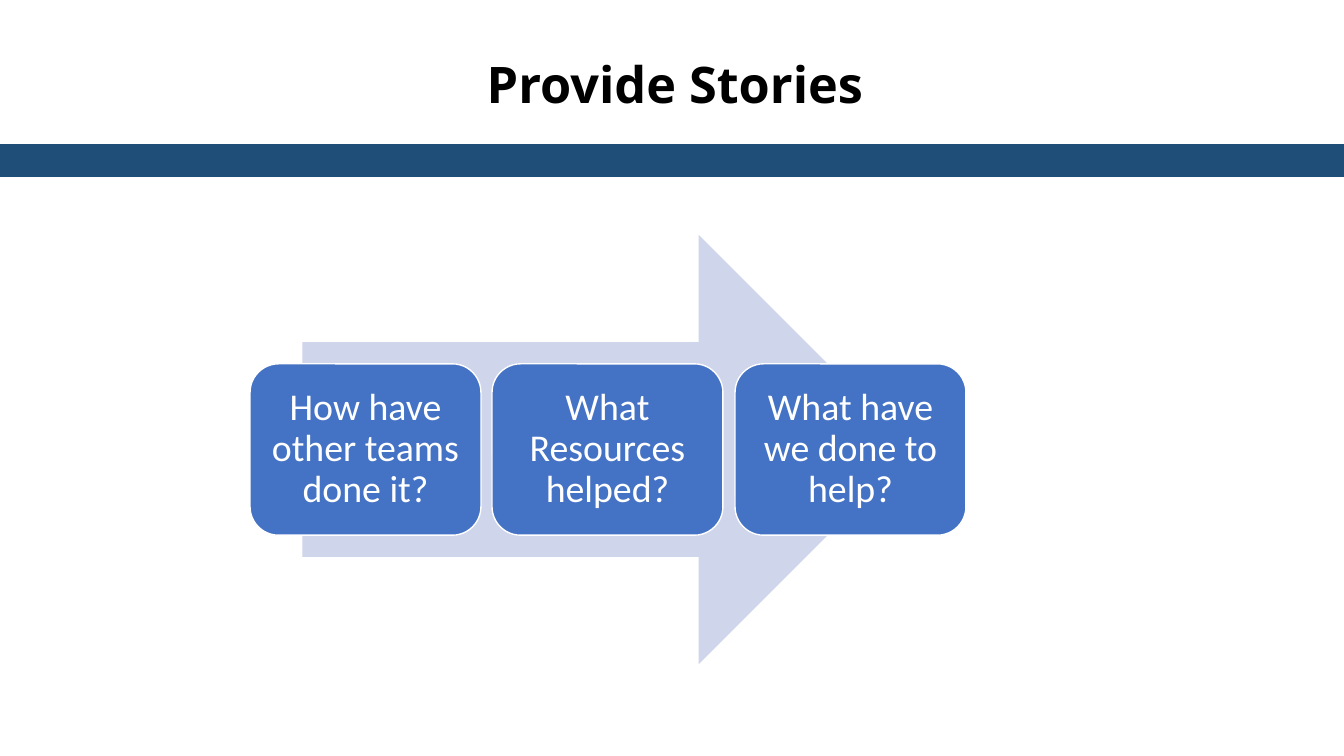
from pptx import Presentation
from pptx import util as u
from pptx.dml.color import RGBColor
from pptx.enum import shapes, text

PX = 9144
INK = {"black": "000000", "navy": "1F4E79", "pale": "CFD5EA",
       "blue": "4472C4", "white": "FFFFFF"}
STEPS = ["How have other teams done it?", "What Resources helped?",
         "What have we done to help?"]
HEAD = {"name": "Open Sans", "size": u.Pt(36), "bold": True}
BODY = {"name": "Calibri", "size": u.Pt(27)}


def put(obj, form):
    """Set each attribute of obj from a dict of values."""
    for key, val in form.items():
        setattr(obj, key, val)


def tint(ink):
    """Return the named colour."""
    return RGBColor.from_string(INK[ink])


def write(shape, words, font, ink, pad, gap):
    """Write one centred paragraph in a shape."""
    frame = shape.text_frame
    put(frame, {"word_wrap": True, "auto_size": text.MSO_AUTO_SIZE.NONE,
                "vertical_anchor": text.MSO_ANCHOR.MIDDLE})
    put(frame, {"margin_" + side: pad * PX
                for side in ("left", "top", "right", "bottom")})
    frame.text = words
    para = frame.paragraphs[0]
    put(para, {"alignment": text.PP_ALIGN.CENTER, "line_spacing": gap})
    put(para.runs[0].font, font)
    para.runs[0].font.color.rgb = tint(ink)


def draw(slide, kind, box, fill, line=None):
    """Add a filled preset shape in the given box."""
    shape = slide.shapes.add_shape(kind, *(n * PX for n in box))
    shape.shadow.inherit = False
    shape.fill.solid()
    shape.fill.fore_color.rgb = tint(fill)
    if line:
        shape.line.color.rgb = tint(line)
        shape.line.width = u.Pt(1)
    else:
        shape.line.fill.background()
    return shape


def top(slide, box):
    """Place the title and the band that closes the header."""
    x, y, w, h = box
    title = slide.shapes.title
    put(title, {"left": (x + 58) * PX, "top": (y + 47) * PX,
                "width": (w - 110) * PX, "height": 71 * PX})
    write(title, "Provide Stories", HEAD, "black", 5, 1.0)
    draw(slide, shapes.MSO_SHAPE.RECTANGLE, (x, y + h - 31, w, 31),
         "navy", "navy")


def flow(slide, box):
    """Place the arrow and the row of steps across it."""
    x, y, w, h = box
    wide, high = 229, 170
    side = (w - 605) // 2
    draw(slide, shapes.MSO_SHAPE.RIGHT_ARROW,
         (x + side, y, w - 2 * side, h), "pale")
    pitch = (w - wide) / (len(STEPS) - 1)
    for i, words in enumerate(STEPS):
        spot = (x + round(i * pitch), y + (h - high) // 2, wide, high)
        step = draw(slide, shapes.MSO_SHAPE.ROUNDED_RECTANGLE, spot,
                    "blue", "white")
        write(step, words, BODY, "white", 11, 0.9)


def main():
    """Build the slide and save it."""
    deck = Presentation()
    put(deck, {"slide_width": 1333 * PX, "slide_height": 750 * PX})
    slide = deck.slides.add_slide(deck.slide_layouts[5])
    top(slide, (0, 0, 1333, 175))
    flow(slide, (248, 233, 710, 426))
    deck.save("out.pptx")


if __name__ == "__main__":
    main()
